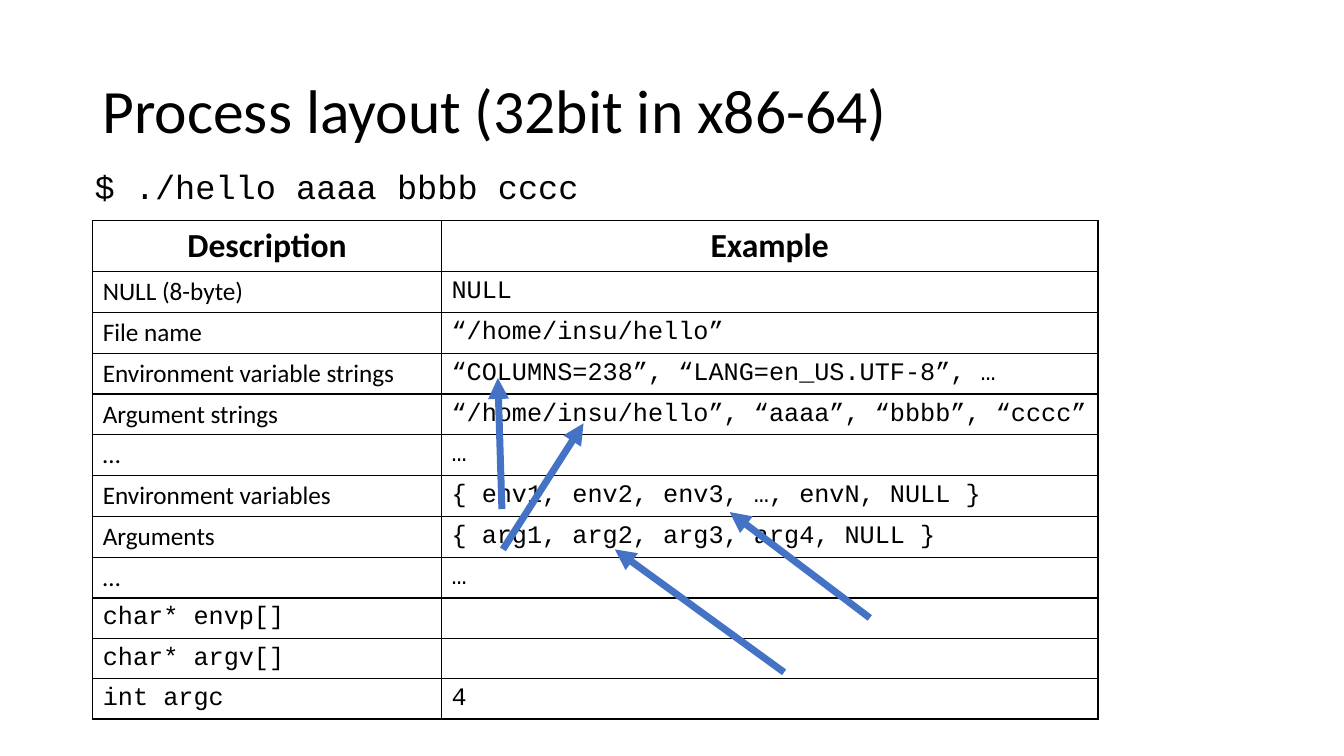
"""Build the slide on the layout of a 32-bit process."""
from lxml import etree
from pptx import Presentation
from pptx.dml.color import RGBColor
from pptx.enum.shapes import MSO_CONNECTOR
from pptx.enum.text import MSO_ANCHOR, PP_ALIGN
from pptx.oxml import parse_xml
from pptx.oxml.ns import nsdecls, qn
from pptx.util import Pt

PX = 4572
BLACK = RGBColor(0x00, 0x00, 0x00)
BLUE = RGBColor(0x44, 0x72, 0xC4)
SANS, MONO = "Calibri", "Courier New"
MIDDLE, TOP = MSO_ANCHOR.MIDDLE, MSO_ANCHOR.TOP
LEFT, CENTER = PP_ALIGN.LEFT, PP_ALIGN.CENTER
STRAIGHT = MSO_CONNECTOR.STRAIGHT


def write(para, text, face, size, bold=False):
    run = para.add_run()
    run.text = text
    run.font.color.rgb = BLACK
    style = {"name": face, "size": Pt(size), "bold": bold}
    for key, value in style.items():
        setattr(run.font, key, value)


def border(cell):
    props = cell._tc.get_or_add_tcPr()
    for spot, side in enumerate(("lnL", "lnR", "lnT", "lnB")):
        props.insert(spot, parse_xml(
            f'<a:{side} {nsdecls("a")} w="12700"><a:solidFill>'
            f'<a:srgbClr val="{BLACK}"/></a:solidFill></a:{side}>'))


deck = Presentation()
deck.slide_width, deck.slide_height = 2667 * PX, 1500 * PX
slide = deck.slides.add_slide(deck.slide_layouts[6])
shapes = slide.shapes

texts = [
    ("Process layout (32bit in x86-64)", (184, 80, 2300, 290), SANS, 44, MIDDLE, 0),
    ("$ ./hello aaaa bbbb cccc", (168, 328, 2300, 952), MONO, 24, TOP, 10),
]
for text, place, face, size, anchor, gap in texts:
    frame = shapes.add_textbox(*(n * PX for n in place)).text_frame
    frame.word_wrap = True
    frame.vertical_anchor = anchor
    para = frame.paragraphs[0]
    para.line_spacing = 0.9
    para.space_before = Pt(gap)
    write(para, text, face, size)

rows = [
    ("Description", "Example"),
    ("NULL (8-byte)", "NULL"),
    ("File name", "“/home/insu/hello”"),
    ("Environment variable strings", "“COLUMNS=238”, “LANG=en_US.UTF-8”, …"),
    ("Argument strings", "“/home/insu/hello”, “aaaa”, “bbbb”, “cccc”"),
    ("…", "…"),
    ("Environment variables", "{ env1, env2, env3, …, envN, NULL }"),
    ("Arguments", "{ arg1, arg2, arg3, arg4, NULL }"),
    ("…", "…"),
    ("char* envp[]", ""),
    ("char* argv[]", ""),
    ("int argc", "4"),
]
widths = (692, 1303)
heights = [101] + [81] * 8 + [77] * 3
table = shapes.add_table(len(rows), len(widths), 184 * PX, 438 * PX,
                         sum(widths) * PX, sum(heights) * PX).table
table.first_row = table.horz_banding = False
for col, width in zip(table.columns, widths):
    col.width = width * PX
for r, (row, height) in enumerate(zip(rows, heights)):
    table.rows[r].height = height * PX
    head = r == 0
    for c, text in enumerate(row):
        cell = table.cell(r, c)
        cell.vertical_anchor = MIDDLE
        cell.fill.background()
        border(cell)
        para = cell.text_frame.paragraphs[0]
        para.alignment = CENTER if head else LEFT
        if text:
            face = MONO if r > 8 or (c and not head) else SANS
            write(para, text, face, 24 if head else 18, head)
        else:
            etree.SubElement(para._p, qn("a:endParaRPr"), sz="1600")

arrows = [
    (996, 1010, 988, 750),
    (998, 1090, 1158, 840),
    (1726, 1226, 1448, 1016),
    (1556, 1334, 1220, 1090),
]
for ends in arrows:
    arrow = shapes.add_connector(STRAIGHT, *(n * PX for n in ends))
    arrow.line.color.rgb = BLUE
    arrow.line.width = Pt(5)
    etree.SubElement(arrow.line._get_or_add_ln(), qn("a:tailEnd"), type="triangle")
    etree.SubElement(arrow._element.spPr, qn("a:effectLst"))

deck.save("out.pptx")
